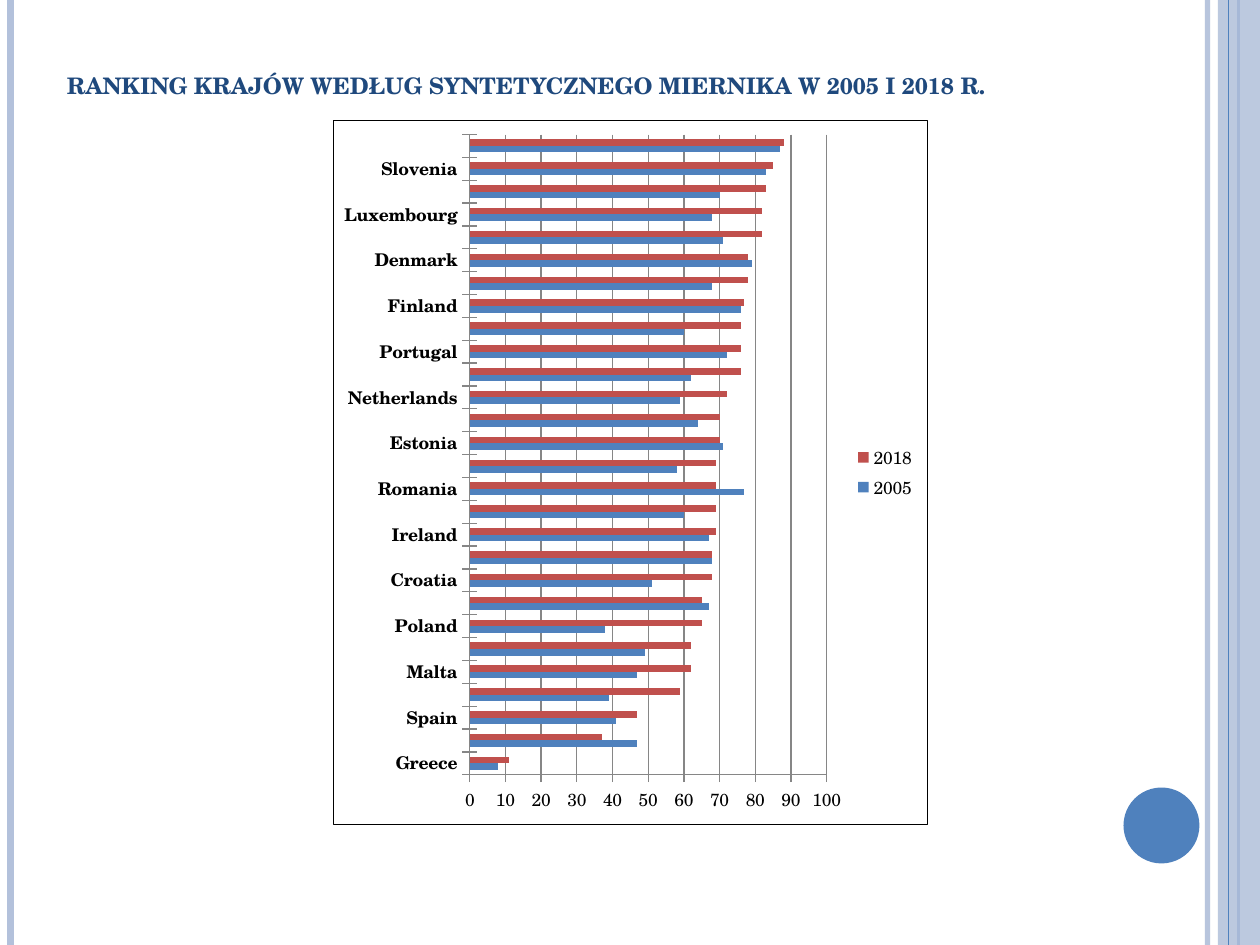
import pptx
import pptx.chart.data
import pptx.dml.color
import pptx.enum.chart
import pptx.enum.shapes
import pptx.enum.text
import pptx.oxml
import pptx.oxml.ns
import pptx.util

Pt = pptx.util.Pt
FONT = "TeX Gyre Schola"
NS = pptx.oxml.ns.nsdecls("a", "c")
RANKING = [
    ("Greece", 8, 11), ("Italy", 47, 37), ("Spain", 41, 47), ("Slovakia", 39, 59),
    ("Malta", 47, 62), ("Czechia", 49, 62), ("Poland", 38, 65), ("Hungary", 67, 65),
    ("Croatia", 51, 68), ("United Kingdom", 68, 68), ("Ireland", 67, 69),
    ("France", 60, 69), ("Romania", 77, 69), ("Cyprus", 58, 69), ("Estonia", 71, 70),
    ("Austria", 64, 70), ("Netherlands", 59, 72), ("Belgium", 62, 76),
    ("Portugal", 72, 76), ("Germany", 60, 76), ("Finland", 76, 77),
    ("Bulgaria", 68, 78), ("Denmark", 79, 78), ("Latvia", 71, 82),
    ("Luxembourg", 68, 82), ("Lithuania", 70, 83), ("Slovenia", 83, 85),
    ("Sweden", 87, 88),
]


def rgb(color):
    """Return the colour for a hex string."""
    return pptx.dml.color.RGBColor.from_string(color)


def set_format(obj, values):
    """Set attributes from a dict of format values."""
    for name, value in values.items():
        setattr(obj, name, value)


def paint(fill, color, opacity=100):
    """Fill with a solid colour of the given opacity in percent."""
    fill.solid()
    fill.fore_color.rgb = rgb(color)
    if opacity < 100:
        alpha = pptx.oxml.parse_xml(f'<a:alpha {NS} val="{opacity * 1000}"/>')
        fill._xPr.find(".//" + pptx.oxml.ns.qn("a:srgbClr")).append(alpha)


def add_stripe(s, x, height, color, width, opacity=100):
    """Draw a full-height vertical line."""
    sp = s.shapes.add_connector(
        pptx.enum.shapes.MSO_CONNECTOR.STRAIGHT, Pt(x), Pt(0), Pt(x), Pt(height))
    sp.line.width = Pt(width)
    paint(sp.line.fill, color, opacity)
    sp._element.spPr.append(pptx.oxml.parse_xml(f"<a:effectLst {NS}/>"))


def add_solid(s, kind, box, color, opacity=100):
    """Draw a filled shape without outline."""
    sp = s.shapes.add_shape(kind, *map(Pt, box))
    sp.shadow.inherit = False
    sp.line.fill.background()
    paint(sp.fill, color, opacity)


def add_frame(s, width, height):
    """Draw the edge stripes, the right band and the disc."""
    kinds = pptx.enum.shapes.MSO_SHAPE
    add_stripe(s, width - 30, height, "B3C1DB", 3, 93)
    add_stripe(s, 6, height, "B3C1DB", 4.5)
    add_stripe(s, width - 12.4, height, "4F81BD", 1.5)
    add_solid(s, kinds.RECTANGLE, (width - 24, 0, 24, height), "B3C1DB", 87)
    add_stripe(s, width - 18, height, "4F81BD", 0.75)
    add_solid(s, kinds.OVAL, (642, 450, 43.4, 43.4), "4F81BD")


def add_title(s, box, text):
    """Place the title in small capitals at the bottom of its box."""
    sp = s.shapes.title
    set_format(sp, dict(zip(("left", "top", "width", "height"), map(Pt, box))))
    tf = sp.text_frame
    set_format(tf, {"word_wrap": True,
                    "vertical_anchor": pptx.enum.text.MSO_ANCHOR.BOTTOM,
                    "auto_size": pptx.enum.text.MSO_AUTO_SIZE.NONE})
    p = tf.paragraphs[0]
    p.alignment = pptx.enum.text.PP_ALIGN.LEFT
    r = p.add_run()
    r.text = text
    set_format(r.font, {"name": FONT, "size": Pt(16.2), "bold": True})
    r.font.color.rgb = rgb("1F497D")
    r.font._element.set("cap", "small")


def add_ranking_chart(s, box):
    """Place the bar chart comparing both years."""
    countries, *years = zip(*RANKING)
    data = pptx.chart.data.CategoryChartData(number_format="0")
    data.categories = countries
    for name, values in zip(("2005", "2018"), years):
        data.add_series(name, values)
    chart = s.shapes.add_chart(
        pptx.enum.chart.XL_CHART_TYPE.BAR_CLUSTERED, *map(Pt, box), data).chart
    set_format(chart, {"has_title": False, "has_legend": True})
    set_format(chart.font, {"name": FONT, "size": Pt(10)})
    chart.font.color.rgb = rgb("000000")
    set_format(chart.legend, {
        "position": pptx.enum.chart.XL_LEGEND_POSITION.RIGHT, "include_in_layout": False})
    plot = chart.plots[0]
    set_format(plot, {"gap_width": 150, "overlap": 0, "vary_by_categories": False})
    for series, color in zip(plot.series, ("4F81BD", "C0504D")):
        paint(series.format.fill, color)
    cross = pptx.enum.chart.XL_TICK_MARK.CROSS
    none = pptx.enum.chart.XL_TICK_MARK.NONE
    for axis in (chart.category_axis, chart.value_axis):
        set_format(axis, {"major_tick_mark": cross, "minor_tick_mark": none})
        paint(axis.format.line.fill, "868686")
    chart.category_axis.tick_labels.font.bold = True
    axis = chart.value_axis
    set_format(axis, {"minimum_scale": 0, "maximum_scale": 100, "major_unit": 10,
                      "has_major_gridlines": True})
    paint(axis.major_gridlines.format.line.fill, "868686")
    set_format(axis.tick_labels, {"number_format": "0", "number_format_is_linked": False})
    add_chart_layout(chart)


def add_chart_layout(chart):
    """Fix the plot area and give the chart a thin black border."""
    area = chart._chartSpace.chart.plotArea
    for old in area.findall(pptx.oxml.ns.qn("c:layout")):
        area.remove(old)
    places = "".join(f'<c:{tag} val="{value}"/>' for tag, value in (
        ("layoutTarget", "inner"), ("xMode", "edge"), ("yMode", "edge"),
        ("x", 0.23), ("y", 0.02), ("w", 0.6), ("h", 0.91)))
    area.insert(0, pptx.oxml.parse_xml(
        f"<c:layout {NS}><c:manualLayout>{places}</c:manualLayout></c:layout>"))
    chart._chartSpace.chart.addnext(pptx.oxml.parse_xml(
        f'<c:spPr {NS}><a:noFill/><a:ln w="{Pt(0.5)}"><a:solidFill>'
        '<a:srgbClr val="000000"/></a:solidFill></a:ln></c:spPr>'))


def main():
    """Build and save the presentation."""
    prs = pptx.Presentation()
    set_format(prs, {"slide_width": Pt(720), "slide_height": Pt(540)})
    s = prs.slides.add_slide(prs.slide_layouts[5])
    add_frame(s, 720, 540)
    add_title(s, (31, 21, 601, 39.6),
              "ranking krajów według syntetycznego miernika w 2005 i 2018 r.")
    add_ranking_chart(s, (190, 68.6, 340.4, 402.6))
    prs.save("out.pptx")


if __name__ == "__main__":
    main()
